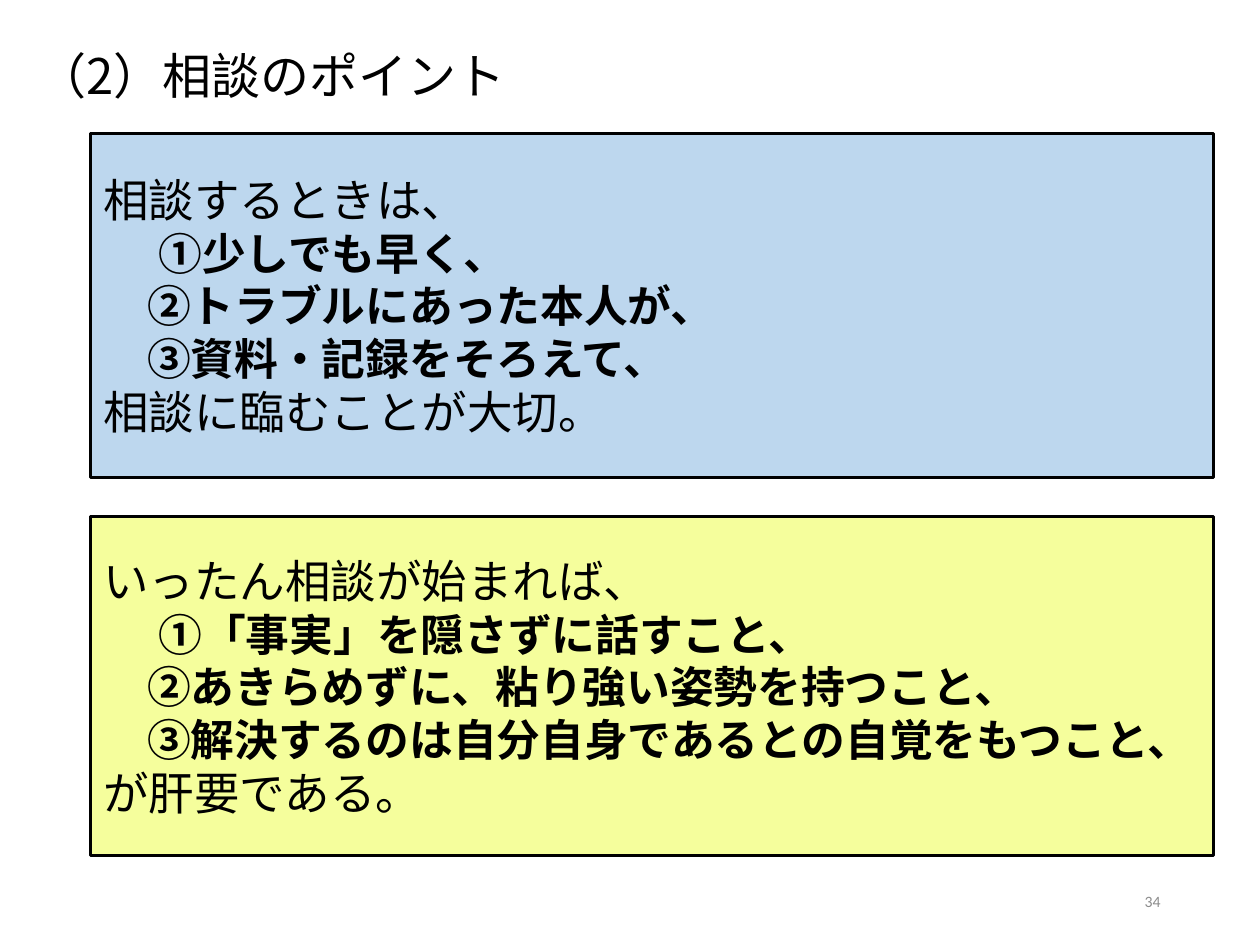
from pptx import Presentation
from pptx.dml.color import RGBColor
from pptx.enum.shapes import MSO_SHAPE
from pptx.enum.text import MSO_ANCHOR, MSO_AUTO_SIZE, PP_ALIGN
from pptx.oxml.ns import qn
from pptx.util import Inches, Pt

RECTANGLE = MSO_SHAPE.RECTANGLE
TOP, MIDDLE = MSO_ANCHOR.TOP, MSO_ANCHOR.MIDDLE
LEFT, RIGHT = PP_ALIGN.LEFT, PP_ALIGN.RIGHT
NO_AUTOFIT = MSO_AUTO_SIZE.NONE
TITLE_ONLY = 5

COLORS = {"ink": "000000", "number": "8C8C8C", "blue": "BDD7EE", "yellow": "F5FE9C"}
JAPANESE = "Noto Sans CJK JP"


class SlideBuilder:
    def __init__(self, slide):
        self.slide = slide

    @staticmethod
    def color(name):
        return RGBColor.from_string(COLORS[name])

    def prepare(self, frame, anchor):
        frame.word_wrap = True
        frame.auto_size = NO_AUTOFIT
        frame.vertical_anchor = anchor
        frame.margin_left = frame.margin_right = Inches(0.1)
        frame.margin_top = frame.margin_bottom = Inches(0.05)

    def text_line(self, paragraph, text, size, font=JAPANESE, color="ink",
                  bold=False, align=LEFT, indent=0):
        paragraph.alignment = align
        paragraph.line_spacing = 1.0
        paragraph.space_before = paragraph.space_after = Pt(0)
        properties = paragraph._p.get_or_add_pPr()
        properties.set("marL", str(Inches(indent)))
        properties.set("indent", "0")
        run = paragraph.add_run()
        run.text = text
        run.font.size = Pt(size)
        run.font.bold = bold
        run.font.name = font
        run.font.color.rgb = self.color(color)
        run_properties = run._r.get_or_add_rPr()
        east_asian = run_properties.makeelement(qn("a:ea"), {"typeface": JAPANESE})
        run_properties.find(qn("a:latin")).addnext(east_asian)

    def title(self, text, left, top, width, height):
        title = self.slide.shapes.title
        title.left, title.top = Inches(left), Inches(top)
        title.width, title.height = Inches(width), Inches(height)
        self.prepare(title.text_frame, TOP)
        self.text_line(title.text_frame.paragraphs[0], text, 28)

    def advice_box(self, top, height, fill, opening, points, closing):
        """Panel with an opening line, bold indented points and a closing line."""
        box = self.slide.shapes.add_shape(
            RECTANGLE, Inches(0.72), Inches(top), Inches(8.91), Inches(height))
        box.shadow.inherit = False
        box.fill.solid()
        box.fill.fore_color.rgb = self.color(fill)
        box.line.color.rgb = self.color("ink")
        box.line.width = Pt(1.5)
        frame = box.text_frame
        self.prepare(frame, MIDDLE)
        self.text_line(frame.paragraphs[0], opening, 26)
        for index, point in enumerate(points):
            indent = 0.44 if index == 0 else 0.35
            self.text_line(frame.add_paragraph(), point, 25, font="Arial",
                           bold=True, indent=indent)
        self.text_line(frame.add_paragraph(), closing, 26)

    def page_number(self, text, left, top, width, height):
        box = self.slide.shapes.add_textbox(
            Inches(left), Inches(top), Inches(width), Inches(height))
        self.prepare(box.text_frame, MIDDLE)
        self.text_line(box.text_frame.paragraphs[0], text, 9, font="Calibri",
                       color="number", align=RIGHT)


def main():
    presentation = Presentation()
    presentation.slide_width, presentation.slide_height = Inches(10), Inches(7.5)
    layout = presentation.slide_layouts[TITLE_ONLY]
    builder = SlideBuilder(presentation.slides.add_slide(layout))

    builder.title("（2）相談のポイント", 0.2, 0.31, 9.6, 0.67)
    builder.advice_box(
        1.06, 2.73, "blue", "相談するときは、",
        ["①少しでも早く、", "②トラブルにあった本人が、", "③資料・記録をそろえて、"],
        "相談に臨むことが大切。")
    builder.advice_box(
        4.1, 2.69, "yellow", "いったん相談が始まれば、",
        ["①「事実」を隠さずに話すこと、", "②あきらめずに、粘り強い姿勢を持つこと、",
         "③解決するのは自分自身であるとの自覚をもつこと、"],
        "が肝要である。")
    builder.page_number("34", 6.62, 6.95, 2.69, 0.4)
    presentation.save("out.pptx")


if __name__ == "__main__":
    main()
